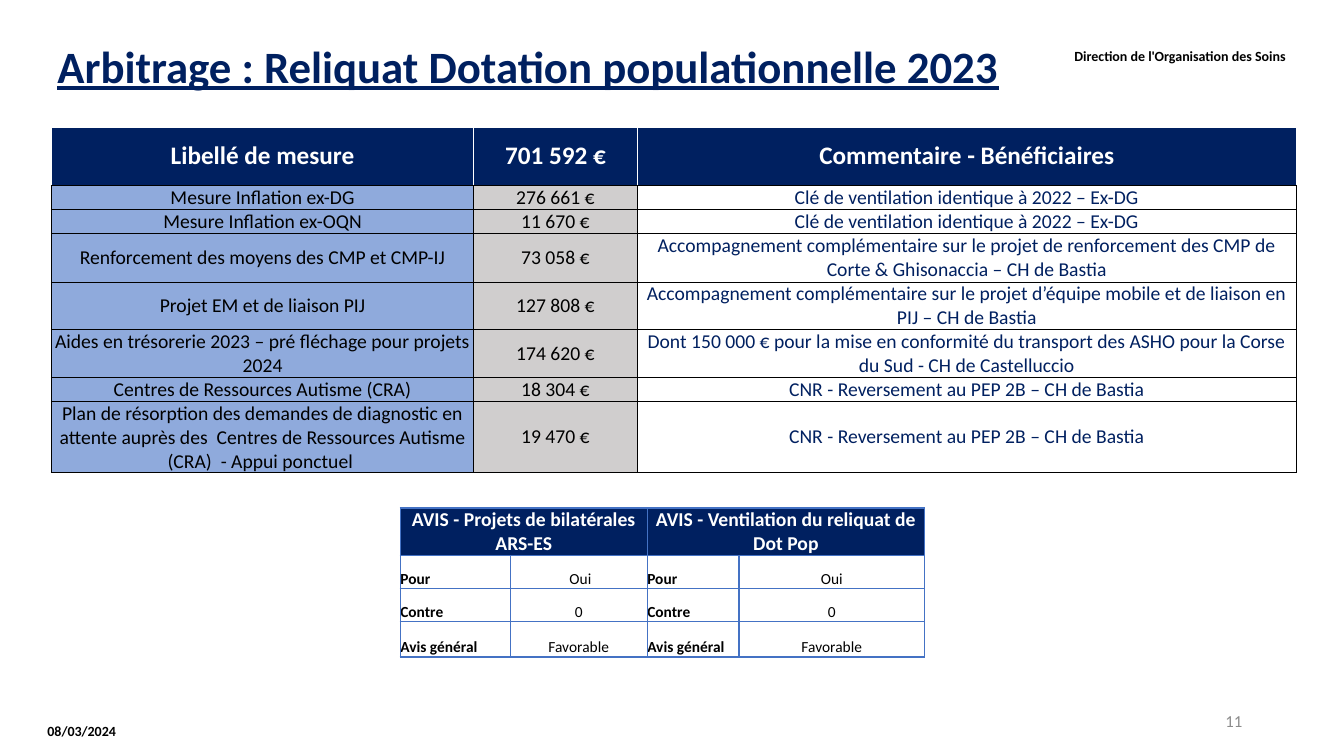
from lxml import etree
from pptx import Presentation
from pptx.dml.color import RGBColor
from pptx.enum.text import MSO_ANCHOR, MSO_AUTO_SIZE, PP_ALIGN
from pptx.oxml.ns import qn
from pptx.util import Inches, Pt

NAVY = RGBColor(0x00, 0x20, 0x60)
BLUE = RGBColor(0x8F, 0xAA, 0xDC)
LINE_BLUE = RGBColor(0x44, 0x72, 0xC4)
SILVER = RGBColor(0xD0, 0xCE, 0xCE)
GREY = RGBColor(0x8C, 0x8C, 0x8C)
BLACK = RGBColor(0, 0, 0)
WHITE = RGBColor(255, 255, 255)

TITLE = "Arbitrage : Reliquat Dotation populationnelle 2023"
# text, box (left, top, width, height), size, bold, colour, alignment, inset
LABELS = [
    ("11", (9.42, 6.95, 3, 0.4), 12, False, GREY, PP_ALIGN.RIGHT, 0.1),
    ("08/03/2024", (0.47, 7, 1.76, 0.5), 10, True, BLACK, PP_ALIGN.LEFT, 0),
    ("Direction de l'Organisation des Soins", (4.18, 0.29, 8.57, 0.52), 10, True, BLACK,
     PP_ALIGN.RIGHT, 0),
]

MEASURES = [
    ("Libellé de mesure", "701 592 €", "Commentaire - Bénéficiaires"),
    ("Mesure Inflation ex-DG", "276 661 €", "Clé de ventilation identique à 2022 – Ex-DG"),
    ("Mesure Inflation ex-OQN", "11 670 €", "Clé de ventilation identique à 2022 – Ex-DG"),
    ("Renforcement des moyens des CMP et CMP-IJ", "73 058 €",
     "Accompagnement complémentaire sur le projet de renforcement des CMP de "
     "Corte & Ghisonaccia – CH de Bastia"),
    ("Projet EM et de liaison PIJ", "127 808 €",
     "Accompagnement complémentaire sur le projet d’équipe mobile et de liaison en "
     "PIJ – CH de Bastia"),
    ("Aides en trésorerie 2023 – pré fléchage pour projets 2024", "174 620 €",
     "Dont 150 000 € pour la mise en conformité du transport des ASHO pour la Corse "
     "du Sud - CH de Castelluccio"),
    ("Centres de Ressources Autisme (CRA)", "18 304 €",
     "CNR - Reversement au PEP 2B – CH de Bastia"),
    ("Plan de résorption des demandes de diagnostic en attente auprès des  Centres de "
     "Ressources Autisme (CRA)  - Appui ponctuel ", "19 470 €",
     "CNR - Reversement au PEP 2B – CH de Bastia"),
]
MEASURE_WIDTHS = [4.19, 1.62, 6.54]
MEASURE_HEIGHTS = [0.58, 0.24, 0.24, 0.48, 0.38, 0.48, 0.24, 0.63]
MEASURE_COLOURS = [(BLUE, BLACK), (SILVER, BLACK), (WHITE, NAVY)]  # fill, text

OPINION_HEADS = ["AVIS - Projets de bilatérales ARS-ES", "AVIS - Ventilation du reliquat de Dot Pop"]
OPINIONS = [
    ("Pour", " Oui", "Pour", "Oui"),
    ("Contre", "0", "Contre", "0"),
    ("Avis général", "Favorable", "Avis général", "Favorable"),
]
OPINION_WIDTHS = [1.09, 1.36, 0.91, 1.84]
OPINION_HEIGHTS = [0.35, 0.33, 0.33, 0.35]


def write(frame, words, size, bold, colour, align):
    frame.text = words
    paragraph = frame.paragraphs[0]
    paragraph.alignment = align
    font = paragraph.font
    font.name, font.size, font.bold = "Calibri", Pt(size), bold
    font.color.rgb = colour
    return paragraph


def set_insets(holder, inset):
    holder.margin_left = holder.margin_right = Inches(inset)
    holder.margin_top = holder.margin_bottom = Inches(min(inset, 0.05))


def add_grid(slide, left, top, widths, heights):
    table = slide.shapes.add_table(
        len(heights), len(widths), Inches(left), Inches(top),
        Inches(sum(widths)), Inches(sum(heights))).table
    for column, width in zip(table.columns, widths):
        column.width = Inches(width)
    for row, height in zip(table.rows, heights):
        row.height = Inches(height)
    return table


def style_cell(cell, anchor, fill, sides, bottom):
    """Set insets, 1 pt borders (bottom apart from the others) and fill; None means no fill."""
    set_insets(cell, 0)
    cell.vertical_anchor = anchor
    properties = cell._tc.get_or_add_tcPr()
    for side, colour in zip("LRTB", (sides, sides, sides, bottom)):
        line = etree.SubElement(properties, qn(f"a:ln{side}"), w=str(Pt(1)))
        solid = etree.SubElement(line, qn("a:solidFill"))
        etree.SubElement(solid, qn("a:srgbClr"), val=str(colour))
    if fill is None:
        cell.fill.background()
    else:
        cell.fill.solid()
        cell.fill.fore_color.rgb = fill


def add_measures(slide):
    table = add_grid(slide, 0.51, 1.26, MEASURE_WIDTHS, MEASURE_HEIGHTS)
    for r, measure in enumerate(MEASURES):
        header = r == 0
        for c, words in enumerate(measure):
            fill, colour = (NAVY, WHITE) if header else MEASURE_COLOURS[c]
            cell = table.cell(r, c)
            style_cell(cell, MSO_ANCHOR.MIDDLE, fill, WHITE if header else BLACK, BLACK)
            write(cell.text_frame, words, 18 if header else 14, header, colour, PP_ALIGN.CENTER)


def add_opinions(slide):
    table = add_grid(slide, 3.97, 5.04, OPINION_WIDTHS, OPINION_HEIGHTS)
    for c in range(len(OPINION_WIDTHS)):
        style_cell(table.cell(0, c), MSO_ANCHOR.BOTTOM, NAVY, LINE_BLUE, LINE_BLUE)
    for i, head in enumerate(OPINION_HEADS):
        cell = table.cell(0, 2 * i)
        cell.merge(table.cell(0, 2 * i + 1))
        write(cell.text_frame, head, 14, True, WHITE, PP_ALIGN.CENTER)
    for r, opinion in enumerate(OPINIONS, start=1):
        for c, words in enumerate(opinion):
            is_label = c % 2 == 0
            cell = table.cell(r, c)
            style_cell(cell, MSO_ANCHOR.BOTTOM, None, LINE_BLUE, LINE_BLUE)
            write(cell.text_frame, words, 11, is_label, BLACK,
                  PP_ALIGN.LEFT if is_label else PP_ALIGN.CENTER)


def main():
    deck = Presentation()
    deck.slide_width, deck.slide_height = Inches(13.33), Inches(7.5)
    slide = deck.slides.add_slide(deck.slide_layouts[5])

    title = slide.shapes.title
    title.left, title.top, title.width, title.height = map(Inches, (0.47, 0.29, 9.75, 0.79))
    title.text_frame.auto_size = MSO_AUTO_SIZE.NONE
    title.text_frame.vertical_anchor = MSO_ANCHOR.MIDDLE
    heading = write(title.text_frame, TITLE, 32, True, NAVY, PP_ALIGN.LEFT)
    heading.font.underline = True
    heading.line_spacing = 0.9

    for words, box, size, bold, colour, align, inset in LABELS:
        frame = slide.shapes.add_textbox(*map(Inches, box)).text_frame
        frame.word_wrap = True
        frame.vertical_anchor = MSO_ANCHOR.MIDDLE
        set_insets(frame, inset)
        write(frame, words, size, bold, colour, align)

    add_measures(slide)
    add_opinions(slide)
    deck.save("out.pptx")


if __name__ == "__main__":
    main()
